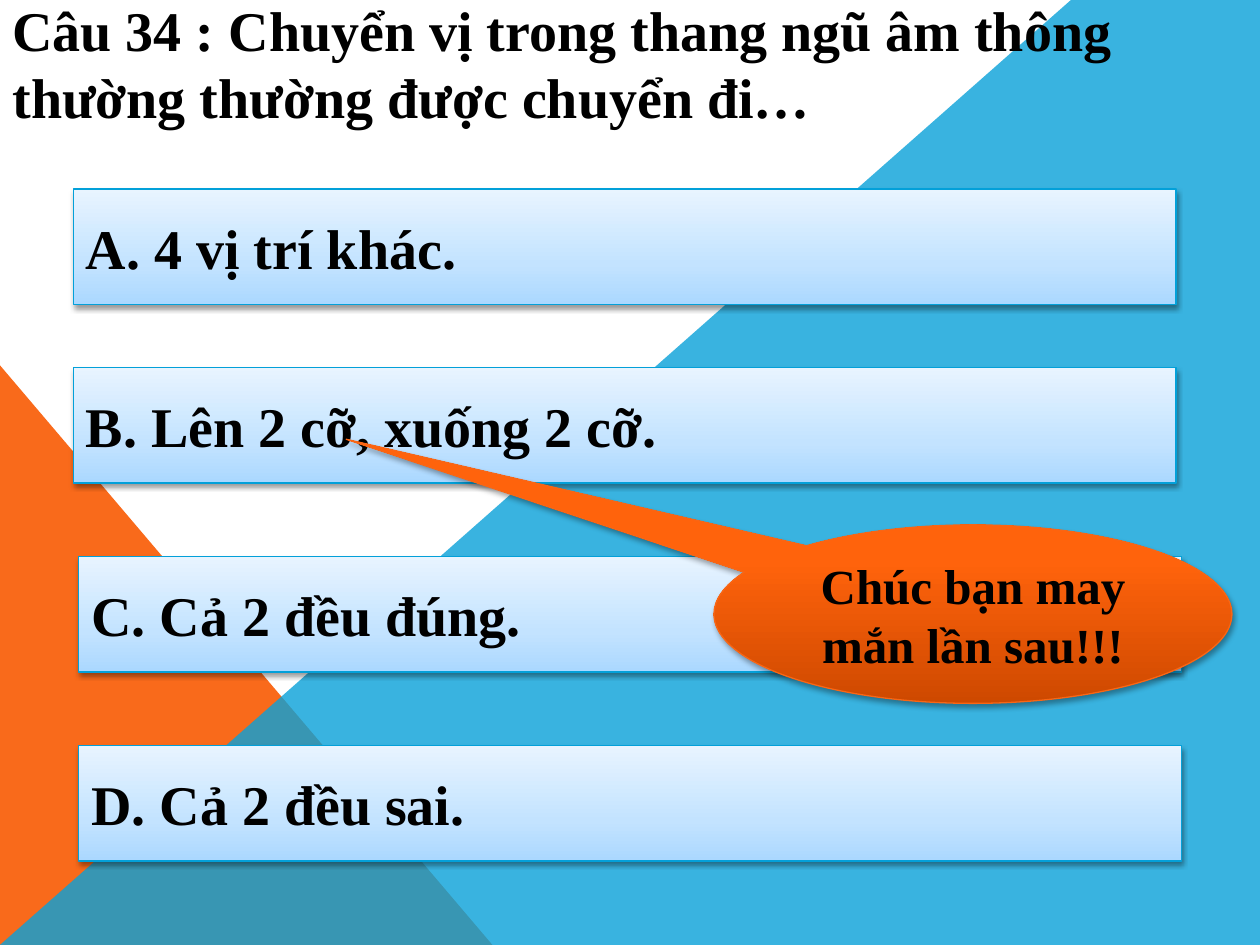
import pptx
import pptx.util
import pptx.dml.color
from pptx.enum.shapes import MSO_SHAPE
from pptx.enum.text import MSO_ANCHOR, PP_ALIGN
from pptx.oxml.ns import qn
from lxml import etree

CELL = pptx.util.Inches(1) / 12  # grid of 120 columns by 90 rows
COLS, ROWS = 120, 90
FONT = "Times New Roman"
BLUE = [(0, "ABD8FF"), (35, "C3E3FF"), (100, "E8F4FF")]
ORANGE = [(0, "CE4900"), (80, "FF630C"), (100, "FF640E")]


def grid(*nums):
    return [round(n * CELL) for n in nums]


def rgb(code):
    return pptx.dml.color.RGBColor.from_string(code)


def add_tint(node, code, alpha=100):
    tint = etree.SubElement(node, qn("a:srgbClr"), val=code)
    if alpha < 100:
        etree.SubElement(tint, qn("a:alpha"), val=str(alpha * 1000))


def paint(shape, code):
    shape.shadow.inherit = False
    shape.fill.solid()
    shape.fill.fore_color.rgb = rgb(code)
    shape.line.fill.background()


def gloss(shape, stops, edge, alpha, drop):
    """Upward gradient, thin edge and soft shadow below."""
    shape.fill.gradient()
    shape.fill.gradient_angle = 90
    ramp = shape.element.spPr.find(".//" + qn("a:gsLst"))
    for old in list(ramp):
        ramp.remove(old)
    for pos, code in stops:
        add_tint(etree.SubElement(ramp, qn("a:gs"), pos=str(pos * 1000)), code)
    shape.line.color.rgb = rgb(edge)
    shape.line.width = pptx.util.Pt(0.75)
    shape.shadow.inherit = False
    glow = etree.SubElement(
        shape.element.spPr.find(qn("a:effectLst")), qn("a:outerShdw"),
        blurRad="40000", dist=str(drop), dir="5400000", rotWithShape="0")
    add_tint(glow, "000000", alpha)


def write(shape, words, size, align=PP_ALIGN.LEFT):
    frame = shape.text_frame
    frame.word_wrap = True
    frame.vertical_anchor = MSO_ANCHOR.MIDDLE
    para = frame.paragraphs[0]
    para.alignment = align
    run = para.add_run()
    run.text = words
    run.font.name = FONT
    run.font.size = pptx.util.Pt(size)
    run.font.bold = True
    run.font.color.rgb = rgb("000000")


def backdrop(slide, wide, high):
    # Orange corner
    top = 34.8
    corner = slide.shapes.add_shape(
        MSO_SHAPE.RIGHT_TRIANGLE, *grid(0, top, 46.9, high - top))
    paint(corner, "F96A1B")
    # Translucent blue sweep
    pen = slide.shapes.build_freeform(0, high, scale=CELL)
    pen.add_line_segments([(101.5, 0), (wide, 0), (wide, high)], close=True)
    sweep = pen.convert_to_shape()
    paint(sweep, "08A1D9")
    tint = sweep.element.spPr.find(".//" + qn("a:srgbClr"))
    etree.SubElement(tint, qn("a:alpha"), val="80000")


def title(slide, box, words):
    write(slide.shapes.add_textbox(*grid(*box)), words, 32)


def answer(slide, box, words):
    bar = slide.shapes.add_shape(MSO_SHAPE.RECTANGLE, *grid(*box))
    gloss(bar, BLUE, "03A0D9", 38, 20000)
    write(bar, words, 32)


def callout(slide, box, words):
    cloud = slide.shapes.add_shape(MSO_SHAPE.OVAL_CALLOUT, *grid(*box))
    cloud.adjustments[0] = -1.21
    cloud.adjustments[1] = -0.98
    gloss(cloud, ORANGE, "F96615", 35, 23000)
    write(cloud, words, 28, PP_ALIGN.CENTER)


def main():
    deck = pptx.Presentation()
    deck.slide_width, deck.slide_height = grid(COLS, ROWS)
    slide = deck.slides.add_slide(deck.slide_layouts[6])
    backdrop(slide, COLS, ROWS)
    title(slide, (0, 0, COLS, 12),
          "Câu 34 : Chuyển vị trong thang ngũ âm thông thường thường được chuyển đi…")
    # Answers: left column, top row, words
    for left, top, words in [
        (7, 18, "A. 4 vị trí khác."),
        (7, 35, "B. Lên 2 cỡ, xuống 2 cỡ."),
        (7.5, 53, "C. Cả 2 đều đúng."),
        (7.5, 71, "D. Cả 2 đều sai."),
    ]:
        answer(slide, (left, top, 105, 11), words)
    callout(slide, (68, 50, 49.33, 17), "Chúc bạn may mắn lần sau!!!")
    deck.save("out.pptx")


if __name__ == "__main__":
    main()
